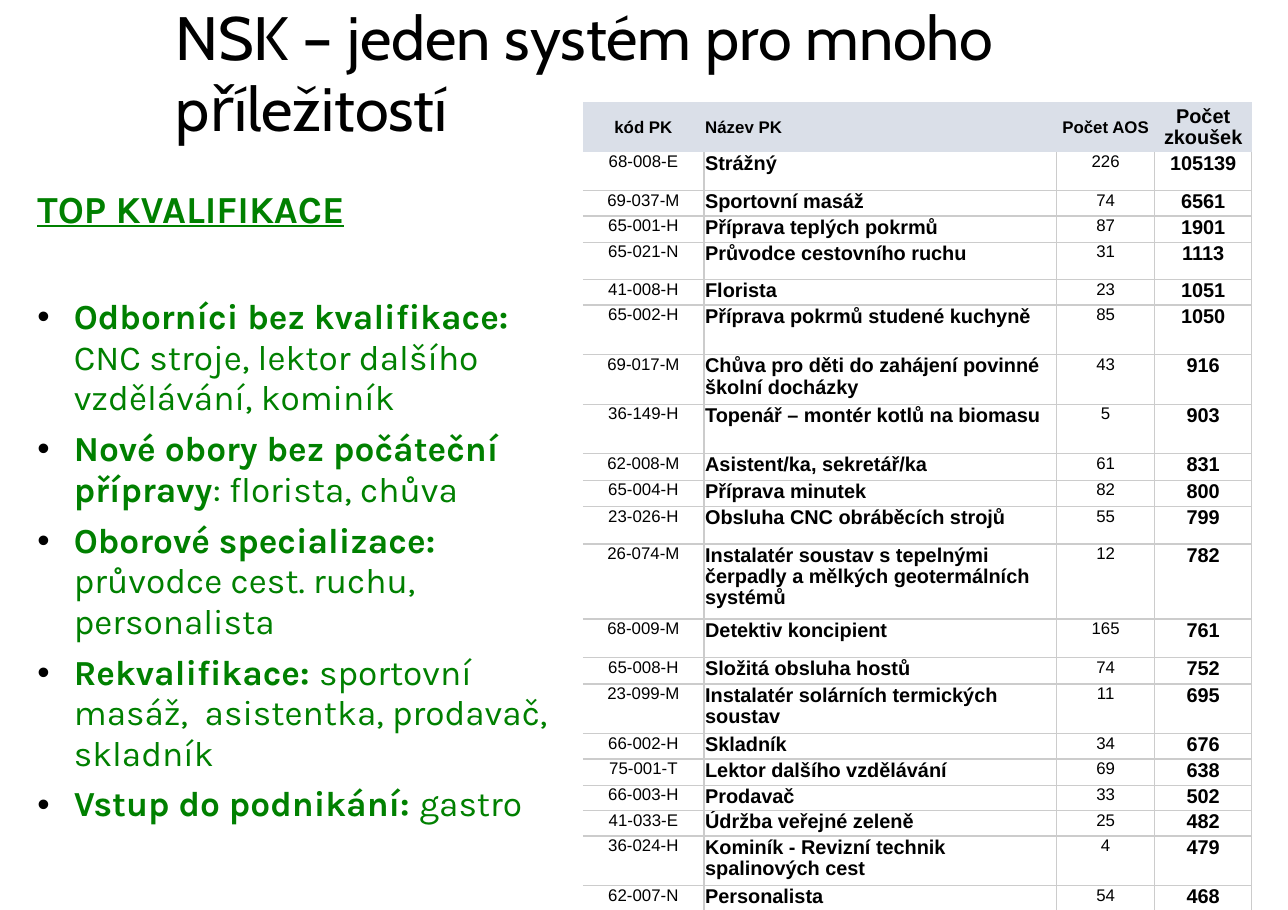
from lxml import etree
from pptx import Presentation
from pptx.dml.color import RGBColor
from pptx.enum.text import MSO_ANCHOR, PP_ALIGN
from pptx.oxml.ns import qn
from pptx.util import Pt

PX = 9144
LEFT, CENTER = PP_ALIGN.LEFT, PP_ALIGN.CENTER
TOP, MIDDLE = MSO_ANCHOR.TOP, MSO_ANCHOR.MIDDLE
COLORS = {"text": "000000", "green": "008000", "header": "DADFE8",
          "body": "FFFFFF", "grid": "CCCCCC"}
LINE_SPACING = 0.96
PLAIN_TABLE_STYLE = "{2D5ABB26-0587-4C30-8999-92F81FD0307C}"

TITLE = "NSK – jeden systém pro mnoho příležitostí"
HEADING = "TOP KVALIFIKACE"
BULLETS = [
    ("Odborníci bez kvalifikace: ", "CNC stroje, lektor dalšího vzdělávání, kominík"),
    ("Nové obory bez počáteční přípravy", ": florista, chůva"),
    ("Oborové specializace: ", "průvodce cest. ruchu, personalista"),
    ("Rekvalifikace: ", "sportovní masáž,  asistentka, prodavač, skladník"),
    ("Vstup do podnikání: ", "gastro"),
]

COLUMN_WIDTHS = [110, 320, 89, 88]
COLUMN_ALIGNS = [CENTER, LEFT, CENTER, CENTER]
HEADER_SIZES = [11, 11, 11, 13]
BODY_SIZES = [11, 13, 11, 13]
HEADER_HEIGHT = 45
HEADER = ["kód PK", "Název PK", "Počet AOS", "Počet zkoušek"]
QUALIFICATIONS = [
    (35, "68-008-E", "Strážný", 226, 105139),
    (23, "69-037-M", "Sportovní masáž", 74, 6561),
    (24, "65-001-H", "Příprava teplých pokrmů", 87, 1901),
    (34, "65-021-N", "Průvodce cestovního ruchu", 31, 1113),
    (23, "41-008-H", "Florista", 23, 1051),
    (45, "65-002-H", "Příprava pokrmů studené kuchyně", 85, 1050),
    (45, "69-017-M", "Chůva pro děti do zahájení povinné školní docházky", 43, 916),
    (45, "36-149-H", "Topenář – montér kotlů na biomasu", 5, 903),
    (24, "62-008-M", "Asistent/ka, sekretář/ka", 61, 831),
    (24, "65-004-H", "Příprava minutek", 82, 800),
    (34, "23-026-H", "Obsluha CNC obráběcích strojů", 55, 799),
    (68, "26-074-M",
     "Instalatér soustav s tepelnými čerpadly a mělkých geotermálních systémů", 12, 782),
    (35, "68-009-M", "Detektiv koncipient", 165, 761),
    (24, "65-008-H", "Složitá obsluha hostů", 74, 752),
    (45, "23-099-M", "Instalatér solárních termických soustav", 11, 695),
    (23, "66-002-H", "Skladník", 34, 676),
    (24, "75-001-T", "Lektor dalšího vzdělávání", 69, 638),
    (23, "66-003-H", "Prodavač", 33, 502),
    (23, "41-033-E", "Údržba veřejné zeleně", 25, 482),
    (45, "36-024-H", "Kominík - Revizní technik spalinových cest", 4, 479),
    (24, "62-007-N", "Personalista", 54, 468),
]


def apply_format(target, values):
    for name, value in values.items():
        setattr(target, name, value)


def add_span(para, text, color, font, size, **values):
    span = para.add_run()
    span.text = text
    apply_format(span.font, {"name": font, "size": Pt(size), **values})
    span.font.color.rgb = RGBColor.from_string(COLORS[color])


def add_box(page, left, top, width, height, inset_x, inset_y, anchor):
    box = page.shapes.add_textbox(left * PX, top * PX, width * PX, height * PX)
    frame = box.text_frame
    apply_format(frame, {
        "word_wrap": True, "vertical_anchor": anchor,
        "margin_left": inset_x * PX, "margin_right": inset_x * PX,
        "margin_top": inset_y * PX, "margin_bottom": inset_y * PX})
    return frame


def add_bullet_mark(para):
    properties = para._p.get_or_add_pPr()
    properties.set("marL", str(33 * PX))
    properties.set("indent", str(-33 * PX))
    color = etree.SubElement(properties, qn("a:buClr"))
    etree.SubElement(color, qn("a:srgbClr"), val=COLORS["text"])
    etree.SubElement(properties, qn("a:buFont"), typeface="Arial")
    etree.SubElement(properties, qn("a:buChar"), char="•")


def add_title(page):
    para = add_box(page, 159, 0, 969, 136, 0, 0, MIDDLE).paragraphs[0]
    para.line_spacing = LINE_SPACING
    add_span(para, TITLE, "text", "Cabin", 40)


def add_bullet_list(page):
    frame = add_box(page, 32, 170, 488, 640, 2, 1, TOP)
    heading = frame.paragraphs[0]
    apply_format(heading, {"line_spacing": LINE_SPACING, "space_after": Pt(39)})
    add_span(heading, HEADING, "green", "Karla", 25, bold=True, underline=True)
    for lead, detail in BULLETS:
        para = frame.add_paragraph()
        add_bullet_mark(para)
        apply_format(para, {"line_spacing": LINE_SPACING,
                            "space_before": Pt(3.4), "space_after": Pt(3.4)})
        add_span(para, lead, "green", "Karla", 23, bold=True)
        add_span(para, detail, "green", "Karla", 23, bold=False)


def add_borders(cell, sides):
    properties = cell._tc.get_or_add_tcPr()
    for position, side in enumerate(sides):
        line = etree.Element(qn(f"a:ln{side}"), w=str(Pt(1)))
        fill = etree.SubElement(line, qn("a:solidFill"))
        etree.SubElement(fill, qn("a:srgbClr"), val=COLORS["grid"])
        properties.insert(position, line)


def fill_cell(cell, text, align, size, bold, anchor, color):
    apply_format(cell, {"margin_left": PX, "margin_right": PX, "margin_top": PX,
                        "margin_bottom": 0, "vertical_anchor": anchor})
    cell.fill.solid()
    cell.fill.fore_color.rgb = RGBColor.from_string(COLORS[color])
    para = cell.text_frame.paragraphs[0]
    apply_format(para, {"alignment": align, "line_spacing": LINE_SPACING})
    add_span(para, str(text), "text", "Arial", size, bold=bold)


def add_qualification_table(page):
    heights = [HEADER_HEIGHT] + [entry[0] for entry in QUALIFICATIONS]
    frame = page.shapes.add_table(
        len(heights), len(COLUMN_WIDTHS), 529 * PX, 93 * PX,
        sum(COLUMN_WIDTHS) * PX, sum(heights) * PX)
    table = frame.table
    apply_format(table, {"first_row": False, "horz_banding": False})
    table._tbl.tblPr.find(qn("a:tableStyleId")).text = PLAIN_TABLE_STYLE
    for column, width in zip(table.columns, COLUMN_WIDTHS):
        column.width = width * PX
    for row, height in zip(table.rows, heights):
        row.height = height * PX
    for column, text in enumerate(HEADER):
        fill_cell(table.cell(0, column), text, COLUMN_ALIGNS[column],
                  HEADER_SIZES[column], True, MIDDLE, "header")
    for row, (_, *values) in enumerate(QUALIFICATIONS, 1):
        for column, text in enumerate(values):
            cell = table.cell(row, column)
            size = BODY_SIZES[column]
            fill_cell(cell, text, COLUMN_ALIGNS[column], size, size == 13, TOP, "body")
            left = "L" if column else ""
            top = "T" if row > 1 else ""
            add_borders(cell, f"{left}R{top}B")


def main():
    deck = Presentation()
    apply_format(deck, {"slide_width": 1169 * PX, "slide_height": 826 * PX})
    page = deck.slides.add_slide(deck.slide_layouts[6])
    add_title(page)
    add_bullet_list(page)
    add_qualification_table(page)
    deck.save("out.pptx")


if __name__ == "__main__":
    main()
